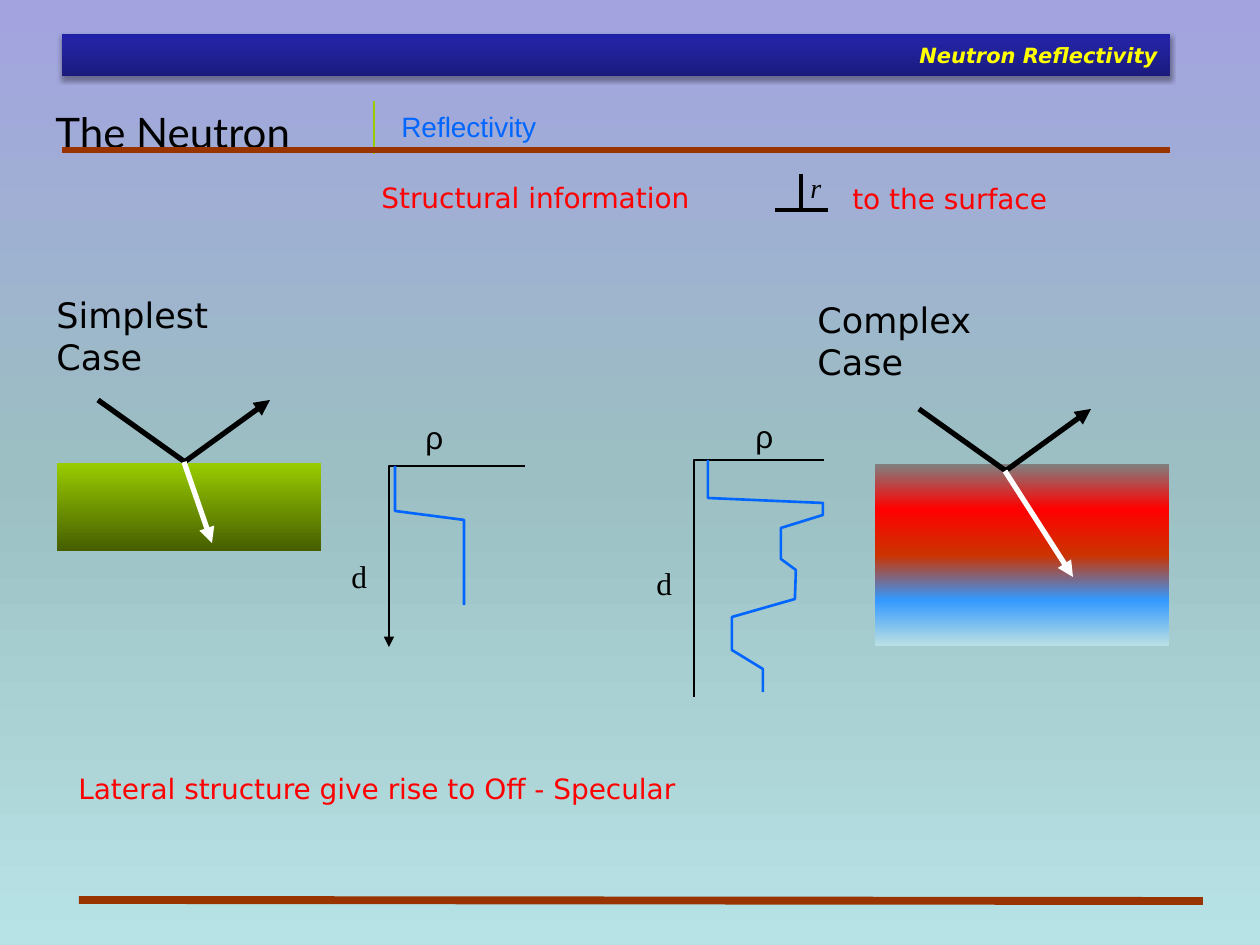
from copy import deepcopy
from itertools import pairwise

from lxml import etree
from pptx import Presentation
from pptx import util as u
from pptx.dml.color import RGBColor
from pptx.enum import shapes as kinds, text as layout
from pptx.oxml import ns

SCALE = 914400 / 126  # EMU per px
BLACK, WHITE, RED, BLUE, BROWN = "000000", "FFFFFF", "FF0000", "0066FF", "993300"
SANS, SERIF = "DejaVu Sans", "Times New Roman"


def px(*lengths):
    return [u.Emu(round(length * SCALE)) for length in lengths]


def color(hex_string):
    return RGBColor.from_string(hex_string)


def set_gradient(fill, element, angle, stops):
    """Give a fill the (position, colour) stops; angle is counter-clockwise."""
    fill.gradient()
    fill.gradient_angle = angle
    stop_list = element.find(".//" + ns.qn("a:gsLst"))
    while len(stop_list) < len(stops):
        stop_list.append(deepcopy(stop_list[-1]))
    for stop, (position, hex_string) in zip(fill.gradient_stops, stops):
        stop.position = position
        stop.color.rgb = color(hex_string)


def write(frame, words, size, font, hex_string, wrap=True, align=None, **formats):
    frame.word_wrap = wrap
    paragraph = frame.paragraphs[0]
    paragraph.alignment = align
    run = paragraph.add_run()
    run.text = words
    run.font.color.rgb = color(hex_string)
    for name, value in {"size": u.Pt(size), "name": font, **formats}.items():
        setattr(run.font, name, value)


def add_text(shapes, box, *content, **formats):
    write(shapes.add_textbox(*px(*box)).text_frame, *content, **formats)


def style_line(shape, hex_string, width, arrow):
    shape.line.color.rgb = color(hex_string)
    shape.line.width = u.Pt(width)
    if arrow:
        line = shape.line._get_or_add_ln()
        etree.SubElement(line, ns.qn("a:tailEnd"), type="triangle")


def add_line(shapes, start, end, hex_string, width, arrow=False):
    connector = shapes.add_connector(
        kinds.MSO_CONNECTOR.STRAIGHT, *px(*start, *end))
    style_line(connector, hex_string, width, arrow)
    etree.SubElement(connector._element.spPr, ns.qn("a:effectLst"))


def add_polyline(shapes, left, top, points, hex_string, arrow=False):
    first, *rest = [px(left + x, top + y) for x, y in points]
    builder = shapes.build_freeform(*first, scale=1.0)
    builder.add_line_segments(rest, close=False)
    shape = builder.convert_to_shape()
    shape.fill.background()
    shape.shadow.inherit = False
    style_line(shape, hex_string, 1.5, arrow)


def add_rectangle(shapes, box, angle, stops):
    shape = shapes.add_shape(kinds.MSO_SHAPE.RECTANGLE, *px(*box))
    shape.shadow.inherit = False
    shape.line.fill.background()
    set_gradient(shape.fill, shape._element, angle, stops)
    return shape


def draw_header(slide, left, top, width, height):
    """Title bar with its shadow, the topic row and the rule below."""
    bar = add_rectangle(slide.shapes, (left, top, width, height), 90,
                        [(0, "1B1B7E"), (0.8, "2323A3"), (1, "2020A6")])
    effects = bar._element.spPr.find(ns.qn("a:effectLst"))
    shadow = etree.SubElement(
        effects, ns.qn("a:outerShdw"), blurRad=str(u.Pt(3.1)),
        dist=str(u.Pt(1.8)), dir="5400000", rotWithShape="0")
    shade = etree.SubElement(shadow, ns.qn("a:srgbClr"), val=BLACK)
    etree.SubElement(shade, ns.qn("a:alpha"), val="35000")
    bar.text_frame.vertical_anchor = layout.MSO_ANCHOR.MIDDLE
    write(bar.text_frame, "Neutron Reflectivity", 12, SANS, "FFFF00",
          align=layout.PP_ALIGN.RIGHT, bold=True, italic=True)

    add_text(slide.shapes, (left - 19, top + 66, 297, 63),
             "The Neutron", 24, "Lato", BLACK)
    add_text(slide.shapes, (left + 327, top + 69, 175, 47),
             "Reflectivity", 16, "Arial", BLUE)
    divider = left + 312
    add_line(slide.shapes, (divider, top + 67), (divider, top + 120), "99CC00", 1.5)
    rule = top + 116
    add_line(slide.shapes, (left, rule), (left + width, rule), BROWN, 3)


def draw_statement(slide, left, top):
    """Structural information perpendicular to the surface."""
    shapes = slide.shapes
    add_text(shapes, (left, top, 416, 47), "Structural information", 16, SANS, RED)
    base = top + 36
    add_line(shapes, (left + 406, base), (left + 459, base), BLACK, 2.25)
    add_line(shapes, (left + 432, top), (left + 432, base), BLACK, 2.25)
    add_text(shapes, (left + 429, top - 10, 37, 47), "r", 16, SERIF, BLACK,
             wrap=False, italic=True)
    add_text(shapes, (left + 471, top + 1, 277, 47), "to the surface", 16, SANS, RED)


def draw_sample(shapes, left, top, width, height, colors):
    """Layers stacked in equal heights, each shading into the next colour."""
    edges = [top + height * i // (len(colors) - 1) for i in range(len(colors))]
    for (upper, lower), (start, end) in zip(pairwise(edges), pairwise(colors)):
        add_rectangle(shapes, (left, upper, width, lower - upper), 270,
                      [(0, start), (1, end)])


def draw_rays(shapes, x, y, depth):
    """Incoming, reflected and transmitted beams meeting at (x, y)."""
    add_line(shapes, (x - 86, y - 62), (x + 1, y), BLACK, 3)
    add_line(shapes, (x - 1, y + 1), (x + 86, y - 62), BLACK, 3, arrow=True)
    add_line(shapes, (x, y), (x + depth[0], y + depth[1]), WHITE, 3, arrow=True)


def draw_profile(shapes, left, top, width, height, rho, d, curve, arrow):
    """Density against depth, with the axes' corner at the top left."""
    axes = [(width, 0), (0, 0), (0, height)]
    add_polyline(shapes, left, top, axes, BLACK, arrow)
    add_polyline(shapes, left, top, curve, BLUE)
    for words, font, (x, y) in (("ρ", "Arial", rho), ("d", SERIF, d)):
        add_text(shapes, (left + x, top + y, 42, 50), words, 18, font, BLACK,
                 wrap=False)


def draw_simplest_case(slide, left, top):
    shapes = slide.shapes.add_group_shape().shapes
    draw_sample(shapes, left + 13, top + 176, 264, 88, ["99CC00", "465E00"])
    draw_rays(shapes, left + 140, top + 175, (28, 81))
    draw_profile(shapes, left + 345, top + 179, 136, 181, (24, -54), (-50, 85),
                 [(6, 0), (6, 45), (75, 54), (75, 139)], arrow=True)
    add_text(shapes, (left, top, 273, 54), "Simplest Case", 20, SANS, BLACK,
             wrap=False)


def draw_complex_case(slide, left, top):
    shapes = slide.shapes.add_group_shape().shapes
    add_text(shapes, (left + 161, top, 260, 54), "Complex Case", 20, SANS, BLACK)
    draw_sample(shapes, left + 231, top + 172, 294, 182,
                ["808080", "FF0000", "CC3300", "3399FF", "BBE0E3"])
    curve = [(14, 0), (14, 38), (129, 43), (129, 55), (87, 68), (87, 99),
             (102, 110), (101, 139), (38, 157), (38, 190), (69, 209), (69, 232)]
    draw_profile(shapes, left + 50, top + 168, 130, 237, (49, -49), (-50, 98),
                 curve, arrow=False)
    draw_rays(shapes, left + 361, top + 179, (68, 106))


def draw_footer(slide, left, top):
    add_text(slide.shapes, (left, top, 728, 47),
             "Lateral structure give rise to Off - Specular", 16, SANS, RED)
    add_line(slide.shapes, (left + 13, top + 135), (left + 1137, top + 136),
             BROWN, 4.5)


def main():
    presentation = Presentation()
    presentation.slide_width, presentation.slide_height = px(1260, 945)
    slide = presentation.slides.add_slide(presentation.slide_layouts[6])
    set_gradient(slide.background.fill, slide._element, 270,
                 [(0, "A3A3E0"), (0.5, "9BBFC2"), (1, "B8E3E6")])
    draw_header(slide, 62, 34, 1108, 42)
    draw_statement(slide, 369, 174)
    draw_simplest_case(slide, 44, 287)
    draw_complex_case(slide, 644, 292)
    draw_footer(slide, 66, 765)
    presentation.save("out.pptx")


if __name__ == "__main__":
    main()
